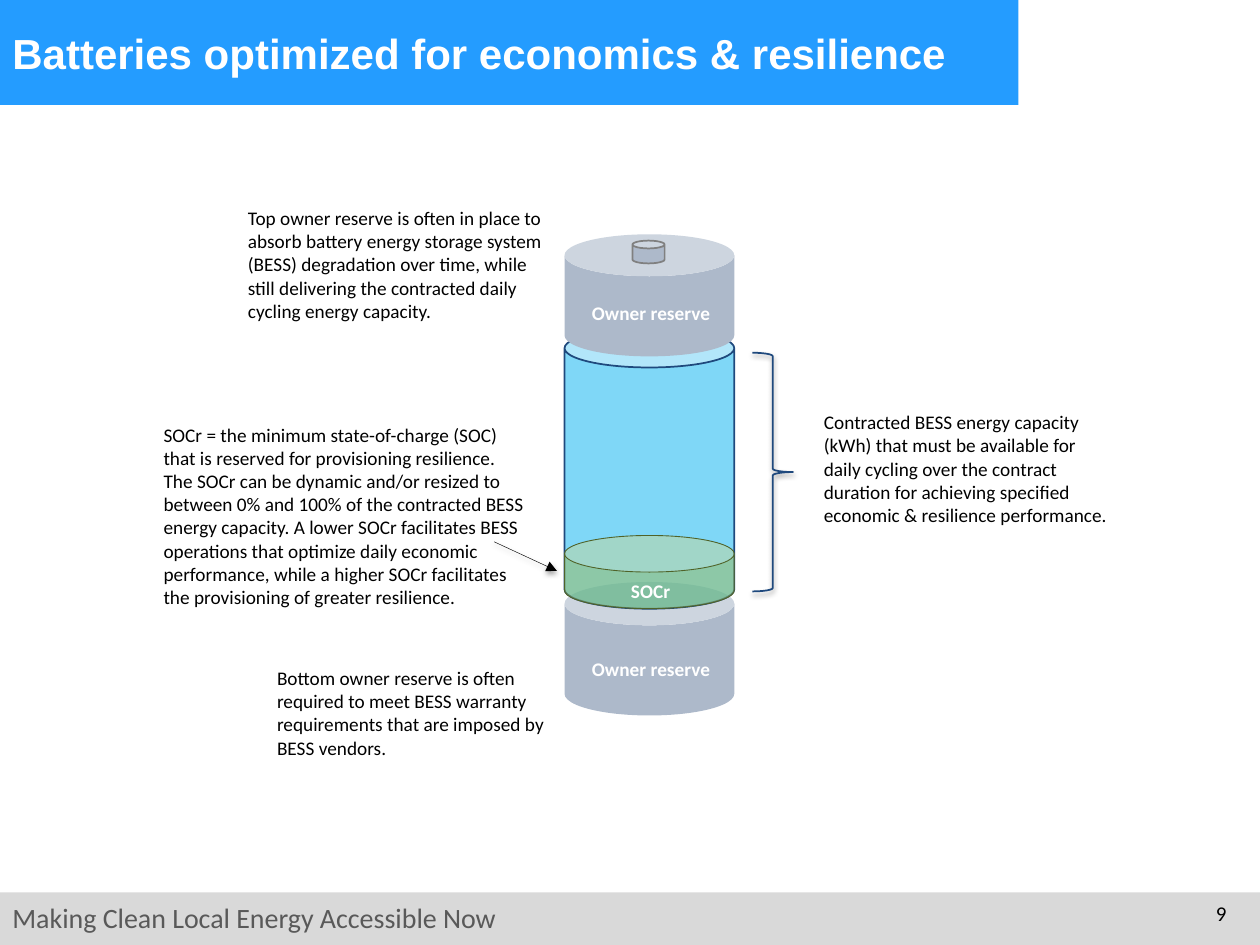
"""Build a slide on batteries optimized for economics and resilience."""
from lxml import etree
from pptx import Presentation
from pptx.dml.color import RGBColor
from pptx.enum.shapes import MSO_CONNECTOR, MSO_SHAPE
from pptx.enum.text import MSO_ANCHOR, PP_ALIGN
from pptx.oxml.ns import qn
from pptx.util import Pt

RECT, CAN, BRACE = MSO_SHAPE.RECTANGLE, MSO_SHAPE.CAN, MSO_SHAPE.RIGHT_BRACE
STRAIGHT = MSO_CONNECTOR.STRAIGHT
TOP, MIDDLE = MSO_ANCHOR.TOP, MSO_ANCHOR.MIDDLE
LEFT, RIGHT = PP_ALIGN.LEFT, PP_ALIGN.RIGHT
color = RGBColor.from_string


def add_solid(parent, kind, box, fill=None, line=None, line_width=1, adjust=None, alpha=None):
    solid = parent.add_shape(kind, *map(Pt, box))
    solid.shadow.inherit = False
    if fill:
        solid.fill.solid()
        solid.fill.fore_color.rgb = color(fill)
    else:
        solid.fill.background()
    if alpha:
        fill_color = solid.fill._xPr.find(".//" + qn("a:srgbClr"))
        etree.SubElement(fill_color, qn("a:alpha"), val=str(alpha * 1000))
    if line:
        solid.line.color.rgb = color(line)
        solid.line.width = Pt(line_width)
    else:
        solid.line.fill.background()
    if adjust:
        solid.adjustments[0] = adjust
    return solid


def add_text(box, text, size=11, ink="000000", bold=False, font="Calibri", anchor=TOP, align=LEFT):
    frame = slide.shapes.add_textbox(*map(Pt, box)).text_frame
    frame.word_wrap = True
    frame.vertical_anchor = anchor
    paragraph = frame.paragraphs[0]
    paragraph.text = text
    paragraph.alignment = align
    paragraph.font.name = font
    paragraph.font.size = Pt(size)
    paragraph.font.bold = bold
    paragraph.font.color.rgb = color(ink)


deck = Presentation()
deck.slide_width, deck.slide_height = Pt(720), Pt(540)
slide = deck.slides.add_slide(deck.slide_layouts[6])

add_solid(slide.shapes, RECT, (0, 510, 720, 30), "D9D9D9")
add_text((0, 511.2, 372, 26.6), "Making Clean Local Energy Accessible Now", 16, "595959")
add_solid(slide.shapes, RECT, (0, 0, 582, 60), "249CFF")
add_text((672, 511.2, 36, 28.8), "9", 12, align=RIGHT)
add_text((0, 0, 590, 60), "Batteries optimized for economics & resilience",
         24, "FFFFFF", True, "Arial", MIDDLE)

battery_left, battery_width = 322.6, 97
battery = slide.shapes.add_group_shape().shapes
add_solid(battery, CAN, (battery_left, 332.6, battery_width, 76.3), "ADB9CA", adjust=0.325)
add_solid(battery, CAN, (battery_left, 187.9, battery_width, 160), "00B0F0", "1F497D",
          adjust=0.228, alpha=50)
add_solid(battery, CAN, (battery_left, 133.9, battery_width, 69.8), "ADB9CA", adjust=0.344)
add_solid(battery, CAN, (361.4, 137.5, 18.4, 13), "ADB9CA", "808080", adjust=0.344)

capacity_brace = add_solid(slide.shapes, BRACE, (430, 201.6, 23.2, 136.4), line="1F497D")
add_solid(slide.shapes, CAN, (battery_left, 306, battery_width, 41.8), "9BBB59", "4F6228",
          0.5, 0.5, 50)

battery_labels = [
    ((331.2, 168.5, 88, 20.6), "Owner reserve"),
    ((353.5, 327.6, 45.4, 20.6), "SOCr"),
    ((331.2, 372.2, 88, 20.6), "Owner reserve"),
]
for box, label in battery_labels:
    add_text(box, label, ink="FFFFFF", bold=True)

explanations = [
    ((463.7, 231.1, 178.6, 74.2),
     "Contracted BESS energy capacity (kWh) that must be available for daily cycling over "
     "the contract duration for achieving specified economic & resilience performance."),
    ((134.6, 114.5, 188, 74.2),
     "Top owner reserve is often in place to absorb battery energy storage system (BESS) "
     "degradation over time, while still delivering the contracted daily cycling energy "
     "capacity."),
    ((151.2, 377.3, 180.7, 60.5),
     "Bottom owner reserve is often required to meet BESS warranty requirements that are "
     "imposed by BESS vendors."),
    ((86.4, 238.3, 221, 113.8),
     "SOCr = the minimum state-of-charge (SOC) that is reserved for provisioning resilience. "
     "The SOCr can be dynamic and/or resized to between 0% and 100% of the contracted BESS "
     "energy capacity. A lower SOCr facilitates BESS operations that optimize daily economic "
     "performance, while a higher SOCr facilitates the provisioning of greater resilience."),
]
for box, explanation in explanations:
    add_text(box, explanation)

socr_arrow = slide.shapes.add_connector(STRAIGHT, Pt(282.4), Pt(309.6), Pt(318.2), Pt(326.2))
socr_arrow.line.color.rgb = color("000000")
socr_arrow.line.width = Pt(0.25)
etree.SubElement(socr_arrow.line._get_or_add_ln(), qn("a:tailEnd"), type="triangle")
arrow_effects = etree.SubElement(socr_arrow._element.spPr, qn("a:effectLst"))
brace_effects = capacity_brace._element.spPr.find(qn("a:effectLst"))

for effects in (brace_effects, arrow_effects):
    shadow = etree.SubElement(effects, qn("a:outerShdw"), blurRad=str(Pt(3.1)),
                              dist=str(Pt(1.6)), dir="5400000", rotWithShape="0")
    shadow_color = etree.SubElement(shadow, qn("a:srgbClr"), val="000000")
    etree.SubElement(shadow_color, qn("a:alpha"), val="38000")

deck.save("out.pptx")
